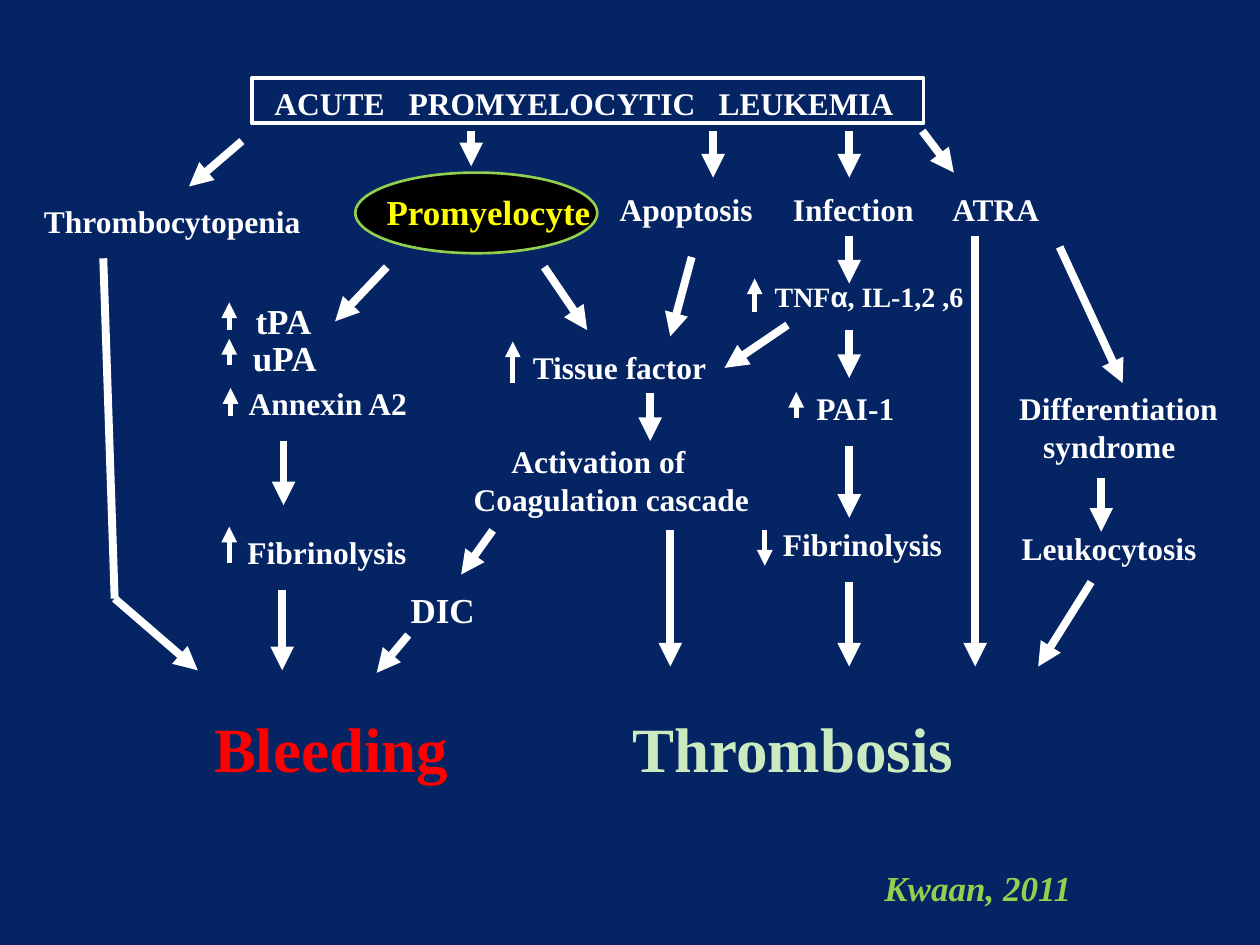
import itertools

import pptx
import pptx.dml.color
import pptx.enum.shapes
import pptx.oxml.ns
import pptx.util
from lxml import etree

CELL = 0.1  # inches: the slide is a grid of 100 columns by 75 rows
COLORS = {
    "background": "002060",
    "white": "FFFFFF",
    "black": "000000",
    "yellow": "FFFF00",
    "green": "92D050",
    "bleeding": "FF0000",
    "thrombosis": "CBEAC0",
}
FONT = "Times New Roman"
SYMBOL_FONT = "Arial"

# text, (column, row, columns, rows), format
LABELS = [
    ("Thrombocytopenia", (2.5, 15.5, 22.6, 3.5), {}),
    ("Apoptosis", (48.2, 14.6, 12.7, 3.5), {}),
    ("Infection", (60.7, 14.6, 13, 4), {"indents": [1.25]}),
    ("ATRA", (74.1, 14.6, 9.5, 4), {"indents": [0.5]}),
    ("tPA", (17.4, 23.3, 8.4, 3.7), {"size": 20, "indents": [1.9]}),
    ("uPA", (16.6, 26.2, 9.6, 3.7), {"size": 20, "indents": [2.5]}),
    ("Annexin A2", (17.5, 30, 16, 3.5), {"indents": [1.25]}),
    ("TNFα, IL-1,2 ,6", (60, 21.7, 17.8, 4), {"size": 16, "indents": [0.5]}),
    ("Tissue factor", (40.7, 27.1, 21.8, 4), {"indents": [0.6]}),
    ("PAI-1", (63.2, 30.4, 8.9, 3.5), {"indents": [0.6]}),
    ("Differentiation\nsyndrome", (79.9, 30.4, 18, 7.1), {"indents": [0, 1.9]}),
    ("Activation of\nCoagulation cascade", (36.6, 34.6, 24.1, 6), {"indents": [3, 0]}),
    ("Fibrinolysis", (17.4, 41.8, 16.7, 3.5), {"indents": [1.25]}),
    ("Fibrinolysis", (59.9, 41.2, 16.7, 4), {"indents": [1.25]}),
    ("Leukocytosis", (80.1, 41.5, 16.7, 4), {}),
    ("DIC", (31.6, 46.2, 7.2, 3.7), {"size": 20}),
    ("Bleeding", (15, 55.8, 21.8, 7.1), {"size": 36, "color": "bleeding", "indents": [1]}),
    ("Thrombosis", (49.2, 55.8, 27.7, 10.1), {"size": 36, "color": "thrombosis"}),
    ("Kwaan, 2011", (69.2, 68.3, 17, 4.4), {"size": 20, "color": "green", "italic": True}),
]

# column: (start row, tip row) of each vertical arrow in it
DOWN_ARROWS = {
    22.4: [(46.8, 53.2)],
    22.5: [(35, 40.1)],
    37.4: [(10.4, 13.2)],
    51.6: [(31.2, 35)],
    53.2: [(42.1, 52.9)],
    56.6: [(10.4, 14.1)],
    67.4: [(10.4, 14.1), (18.7, 22.5), (26.2, 30), (35.4, 41.1), (46.2, 52.9)],
    77.4: [(18.7, 52.9)],
    87.4: [(37.9, 42.2)],
}
# start column, start row, tip column, tip row
SLANTED_ARROWS = [
    (19.2, 11.2, 15, 14.8),
    (73.2, 10.4, 75.7, 13.7),
    (30.7, 21.2, 26.6, 25.5),
    (43.2, 21.2, 46.6, 26.2),
    (54.9, 20.4, 53.2, 26.7),
    (62.5, 25.8, 57.5, 29.2),
    (84.1, 19.6, 89.1, 30.4),
    (39.1, 42.1, 36.6, 45.6),
    (32.4, 50.4, 29.9, 53.4),
    (86.6, 46.2, 82.4, 52.9),
    (9.1, 47.5, 15.7, 53.2),
]
# column, start row, tip row of the small increase and decrease marks
CHANGE_MARKS = [
    (18.2, 26.2, 24),
    (18.2, 29, 26.9),
    (18.3, 33, 30.8),
    (18.2, 44.7, 41.8),
    (40.7, 30.4, 27.1),
    (59.9, 24.8, 22.1),
    (63.2, 33.2, 31.1),
    (60.7, 42.1, 44.9),
]


def grid(*cells):
    return [pptx.util.Inches(n * CELL) for n in cells]


def rgb(name):
    return pptx.dml.color.RGBColor.from_string(COLORS[name])


def sub_element(parent, tag, **attrs):
    return etree.SubElement(parent, pptx.oxml.ns.qn(tag), **attrs)


def set_background(s):
    fill = s.background.fill
    fill.solid()
    fill.fore_color.rgb = rgb("background")
    color = next(s.element.iter(pptx.oxml.ns.qn("a:srgbClr")))
    sub_element(color, "a:alpha", val="98000")


def font_for(char):
    return FONT if char.isascii() else SYMBOL_FONT


def add_text(s, text, box, size=18, color="white", italic=False, indents=(), tabs=()):
    """Add bold text, one paragraph a line; indents and tab stops are in columns."""
    tf = s.shapes.add_textbox(*grid(*box)).text_frame
    tf.word_wrap = True
    tf.margin_right = 0
    for i, line in enumerate(text.split("\n")):
        p = tf.paragraphs[0] if i == 0 else tf.add_paragraph()
        p_pr = p._p.get_or_add_pPr()
        if indents:
            p_pr.set("marL", str(grid(indents[i])[0]))
        if tabs:
            stops = sub_element(p_pr, "a:tabLst")
            for stop in grid(*tabs):
                sub_element(stops, "a:tab", pos=str(stop), algn="l")
        for font, chars in itertools.groupby(line, font_for):
            r = p.add_run()
            r.text = "".join(chars)
            r.font.name = font
            r.font.size = pptx.util.Pt(size)
            r.font.bold = True
            r.font.italic = italic
            r.font.color.rgb = rgb(color)


def add_outline(s, kind, box, line, width, fill=None):
    sp = s.shapes.add_shape(kind, *grid(*box))
    sp.shadow.inherit = False
    sp.line.color.rgb = rgb(line)
    sp.line.width = pptx.util.Pt(width)
    if fill:
        sp.fill.solid()
        sp.fill.fore_color.rgb = rgb(fill)
    else:
        sp.fill.background()


def add_line(s, start_col, start_row, end_col, end_row, width=4.5, arrow=True):
    line = s.shapes.add_connector(
        pptx.enum.shapes.MSO_CONNECTOR.STRAIGHT,
        *grid(start_col, start_row, end_col, end_row))
    line.line.color.rgb = rgb("white")
    line.line.width = pptx.util.Pt(width)
    if arrow:
        sub_element(line.line._get_or_add_ln(), "a:tailEnd", type="triangle")
    sub_element(line._element.spPr, "a:effectLst")


def main():
    prs = pptx.Presentation()
    prs.slide_width, prs.slide_height = grid(100, 75)
    s = prs.slides.add_slide(prs.slide_layouts[6])
    set_background(s)

    shapes = pptx.enum.shapes.MSO_SHAPE
    add_outline(s, shapes.RECTANGLE, (20, 6.2, 53.3, 3.6), "white", 2.25)
    add_text(s, "ACUTE\tPROMYELOCYTIC\tLEUKEMIA", (20.8, 6.2, 51.7, 4), tabs=(10.65, 35.25))
    add_outline(s, shapes.OVAL, (28.2, 13.7, 19.2, 6.4), "green", 1.5, fill="black")
    add_text(s, "Promyelocyte", (29.1, 14.6, 18.9, 4.4), size=20, color="yellow", indents=[0.6])
    for text, box, style in LABELS:
        add_text(s, text, box, **style)

    for col, spans in DOWN_ARROWS.items():
        for start, tip in spans:
            add_line(s, col, start, col, tip)
    for ends in SLANTED_ARROWS:
        add_line(s, *ends)
    add_line(s, 8.2, 20.5, 9.1, 47.5, arrow=False)
    for col, start, tip in CHANGE_MARKS:
        add_line(s, col, start, col, tip, width=3)

    prs.save("out.pptx")


if __name__ == "__main__":
    main()
